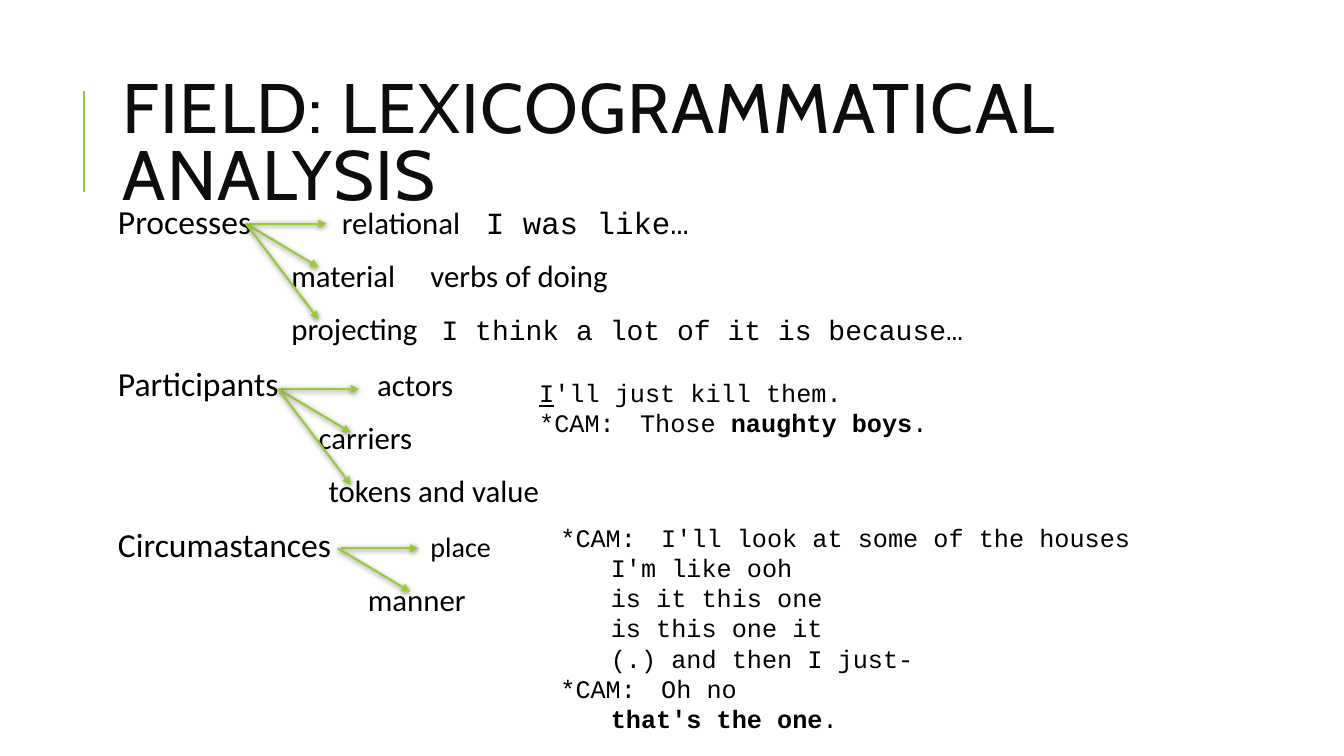
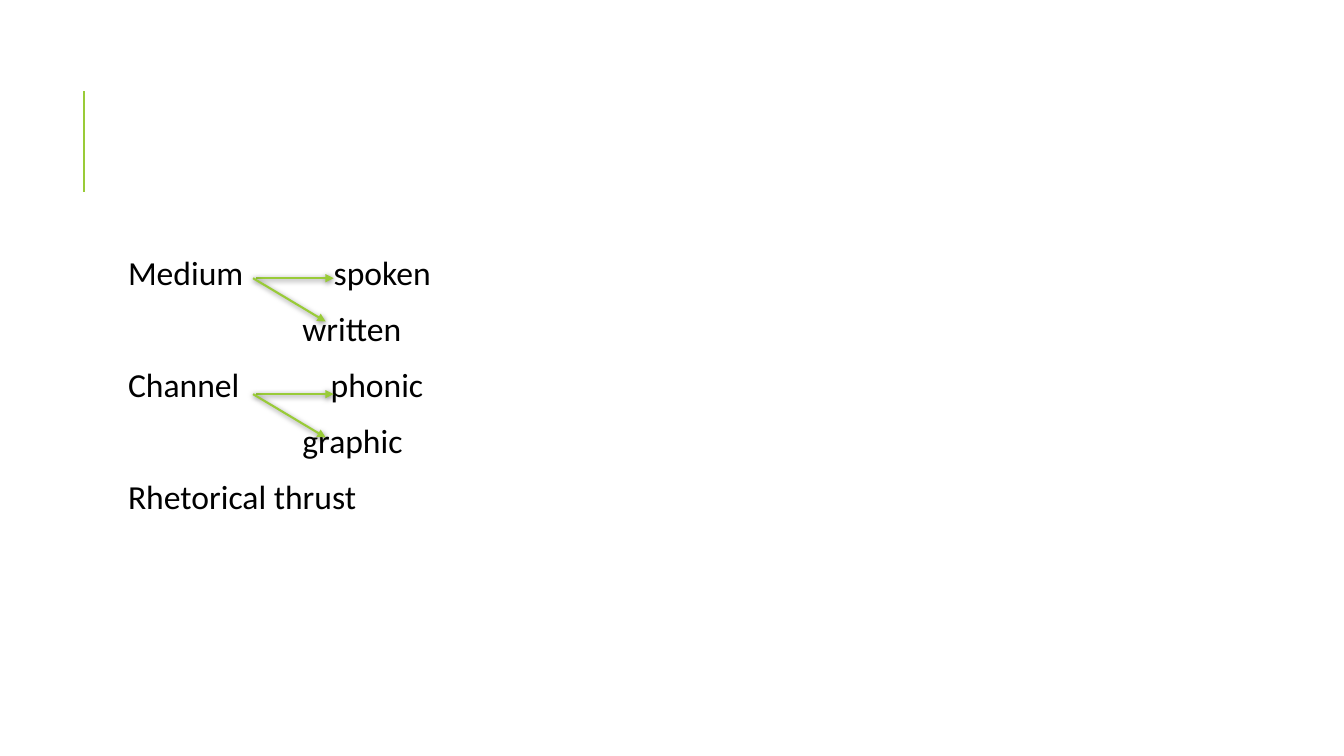
from typing import NamedTuple

from lxml import etree
from pptx import Presentation
from pptx.dml.color import RGBColor
from pptx.enum.shapes import MSO_CONNECTOR
from pptx.enum.text import MSO_ANCHOR
from pptx.oxml.ns import qn
from pptx.util import Inches, Pt

STRAIGHT = MSO_CONNECTOR.STRAIGHT
TOP, MIDDLE = MSO_ANCHOR.TOP, MSO_ANCHOR.MIDDLE

GREEN, INK, BLACK = "99CB38", "0D0D0D", "000000"
HEAD, SANS, MONO = "Cabin", "Calibri", "Courier New"
WIDTH = 10.63
STOPS = [0.5, 1]


class Part(NamedTuple):
    """A run of text; stop is its tab position within the row."""
    text: str
    size: float = 22
    stop: float = 0
    face: str = SANS
    bold: bool = False
    under: bool = False


class Fan(NamedTuple):
    """Arrows spreading from one point."""
    left: float
    top: float
    count: int = 2


# Ends of the arrows: start shift, then end offset
RAYS = [(0.03, 0.8, 0), (0, 0.72, 0.43), (0, 0.72, 0.95)]


def paint(code: str) -> RGBColor:
    return RGBColor.from_string(code)


def add(parent, tag: str, **attrs):
    return etree.SubElement(parent, qn(tag), {k: str(v) for k, v in attrs.items()})


def line(slide, x1: float, y1: float, x2: float, y2: float, arrow: bool = False) -> None:
    rule = slide.shapes.add_connector(
        STRAIGHT, Inches(x1), Inches(y1), Inches(x2), Inches(y2))
    rule.line.color.rgb = paint(GREEN)
    rule.line.width = Pt(1.5)
    props = rule._element.spPr
    effects = add(props, "a:effectLst")
    if arrow:
        add(props.find(qn("a:ln")), "a:tailEnd", type="triangle")
        shade = add(effects, "a:outerShdw", blurRad=Pt(4), dist=Pt(1),
                    dir=90 * 60000, rotWithShape=0)
        add(add(shade, "a:srgbClr", val=BLACK), "a:alpha", val=50000)


def draw_fan(slide, fan: Fan) -> None:
    for shift, dx, dy in RAYS[:fan.count]:
        line(slide, fan.left + shift, fan.top, fan.left + dx, fan.top + dy, True)


def text_box(slide, left: float, top: float, width: float, height: float,
             inset: float = 0.1, anchor=TOP):
    frame = slide.shapes.add_textbox(
        Inches(left), Inches(top), Inches(width), Inches(height)).text_frame
    frame.word_wrap = True
    frame.vertical_anchor = anchor
    frame.margin_left = frame.margin_right = Inches(inset)
    return frame


def fill_row(para, parts: list[Part], stops: list[float]) -> None:
    if stops:
        tabs = add(para._p.get_or_add_pPr(), "a:tabLst")
        for stop in stops:
            add(tabs, "a:tab", pos=Inches(stop), algn="l")
    para.font.color.rgb = paint(BLACK)
    sizes = {part.size for part in parts}
    faces = {part.face for part in parts}
    if len(sizes) == 1:
        para.font.size = Pt(parts[0].size)
    if len(faces) == 1:
        para.font.name = parts[0].face
    for part in parts:
        run = para.add_run()
        run.text = "\t" + part.text if part.stop else part.text
        if len(sizes) > 1:
            run.font.size = Pt(part.size)
        if len(faces) > 1:
            run.font.name = part.face
        if part.bold:
            run.font.bold = True
        if part.under:
            run.font.underline = True


def fill(frame, rows: list[list[Part]], stops: list[float] | None = None,
         loose: bool = False) -> None:
    for i, parts in enumerate(rows):
        para = frame.add_paragraph() if i else frame.paragraphs[0]
        if loose:
            para.line_spacing = 0.9
            para.space_before, para.space_after = Pt(12), Pt(2)
        fill_row(para, parts, stops or [p.stop for p in parts if p.stop])


def body(slide, left: float, top: float, rows: list[list[Part]]) -> None:
    fill(text_box(slide, left, top, WIDTH, 4.4, 0.05), rows, loose=True)


def mono(text: str, bold: bool = False, under: bool = False) -> Part:
    return Part(text, 18, 0, MONO, bold, under)


def title(slide, text: str) -> None:
    frame = text_box(slide, 1.12, 0.64, WIDTH, 1.64, anchor=MIDDLE)
    para = frame.paragraphs[0]
    para.line_spacing = 0.8
    para.font.size, para.font.name = Pt(50), HEAD
    para.font.color.rgb = paint(INK)
    run = para.add_run()
    run.text = text
    run._r.get_or_add_rPr().set("spc", "100")


def new_slide(deck):
    slide = deck.slides.add_slide(deck.slide_layouts[6])
    line(slide, 0.83, 1.9, 0.83, 0.9)
    return slide


# Field slide
FIELD = [
    [Part("Processes", 24), Part("relational", stop=2.22),
     Part("I was like…", stop=3.65, face=MONO)],
    [Part("material", stop=1.72), Part("verbs of doing", stop=3.1)],
    [Part("projecting", stop=1.72),
     Part("I think a lot of it is because…", 20, 3.21, MONO)],
    [Part("Participants", 24), Part("actors", stop=2.57)],
    [Part("carriers", stop=1.99)],
    [Part("tokens and value", stop=2.09)],
    [Part("Circumastances", 24), Part("place", 20, 3.1)],
    [Part("manner", stop=2.48)],
]
ACTORS = [
    [mono("I", under=True), mono("'ll just kill them.")],
    [mono("*CAM:\tThose "), mono("naughty boys", bold=True), mono(".")],
]
PLACE = [
    [mono("*CAM:\tI'll look at some of the houses")],
    [mono("\tI'm like ooh")],
    [mono("\tis it this one")],
    [mono("\tis this one it")],
    [mono("\t(.) and then I just-")],
    [mono("*CAM:\tOh no")],
    [mono("\t"), mono("that's the one", bold=True), mono(".")],
]

# Mode slide
MODE = [
    [Part("Medium", 24), Part("spoken", 24, 2.04)],
    [Part("written", 24, 1.73)],
    [Part("Channel", 24), Part("phonic", 24, 2.01)],
    [Part("graphic", 24, 1.73)],
    [Part("Rhetorical thrust", 24)],
]


def field_slide(deck) -> None:
    slide = new_slide(deck)
    title(slide, "FIELD: LEXICOGRAMMATICAL ANALYSIS")
    body(slide, 1.12, 1.99, FIELD)
    for fan in (Fan(2.44, 2.22, 3), Fan(2.76, 3.86, 3), Fan(3.35, 5.44)):
        draw_fan(slide, fan)
    fill(text_box(slide, 5.25, 3.69, 4.23, 1.01), ACTORS, STOPS)
    fill(text_box(slide, 5.46, 5.13, 6.04, 2.52), PLACE, STOPS)


def mode_slide(deck) -> None:
    slide = new_slide(deck)
    body(slide, 1.22, 2.5, MODE)
    for fan in (Fan(2.51, 2.76), Fan(2.51, 3.91)):
        draw_fan(slide, fan)


def main() -> None:
    deck = Presentation()
    deck.slide_width, deck.slide_height = Inches(13.33), Inches(7.5)
    field_slide(deck)
    mode_slide(deck)
    deck.save("out.pptx")


if __name__ == "__main__":
    main()
